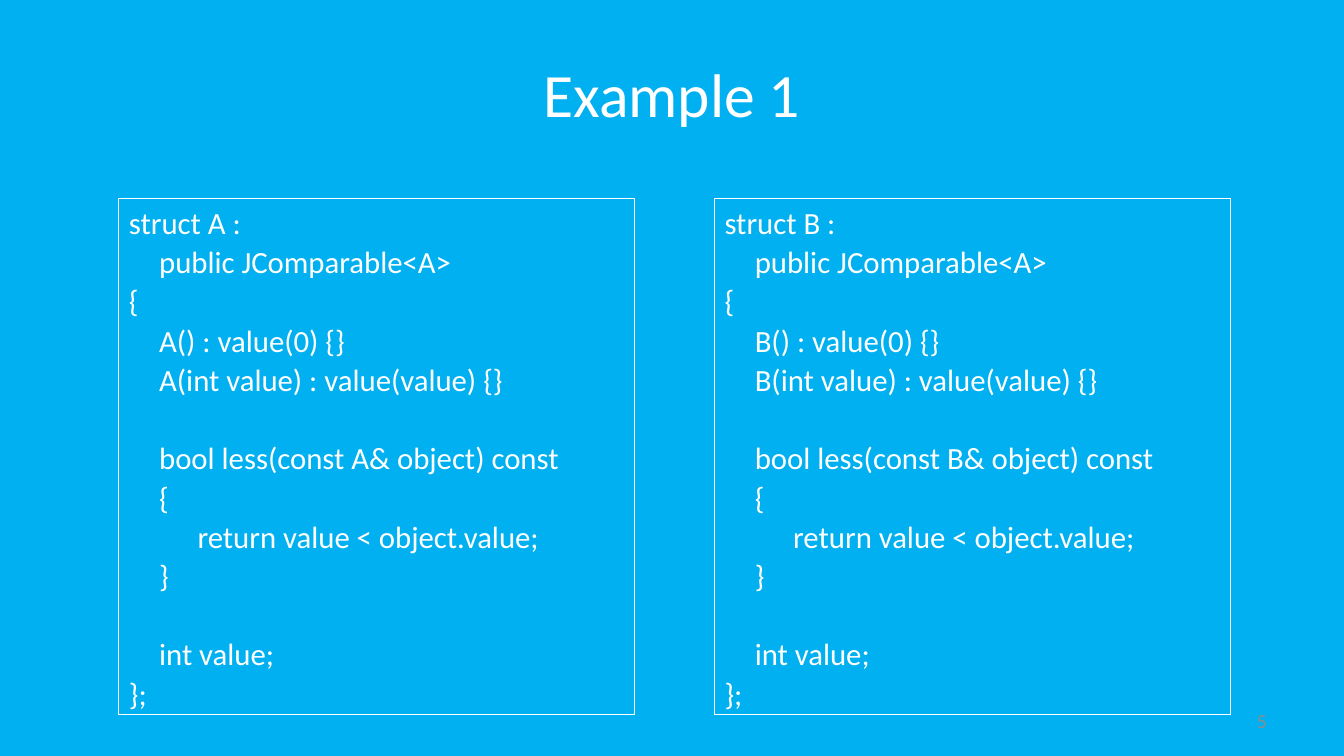
from pptx import Presentation
from pptx.dml.color import RGBColor
from pptx.enum.shapes import MSO_SHAPE
from pptx.enum.text import MSO_ANCHOR, PP_ALIGN
from pptx.util import Pt

# Content: each code line is (indent level, blank lines above, text)
TITLE = "Example 1"
PAGE_NUMBER = "5"
STRUCT_NAMES = ["A", "B"]
STRUCT_LINES = [
    (0, 0, "struct {name} :"),
    (1, 0, "public JComparable<A>"),
    (0, 0, "{{"),
    (1, 0, "{name}() : value(0) {{}}"),
    (1, 0, "{name}(int value) : value(value) {{}}"),
    (1, 1, "bool less(const {name}& object) const"),
    (1, 0, "{{"),
    (2, 0, "return value < object.value;"),
    (1, 0, "}}"),
    (1, 1, "int value;"),
    (0, 0, "}};"),
]

THEME = {
    "font": "Calibri",
    "background": RGBColor(0x00, 0xB0, 0xF0),
    "ink": RGBColor(0xFF, 0xFF, 0xFF),
    "muted": RGBColor(0x8C, 0x8C, 0x8C),
    "title_size": Pt(44),
    "code_size": Pt(22),
    "page_size": Pt(14),
}

# Layout in points
SLIDE_SIZE = (960, 540)
TITLE_BOX = (48, 21.6, 864, 90)
PAGE_BOX = (688, 500.5, 224, 28.75)
PANEL_LEFT, PANEL_TOP, PANEL_SIDE, PANEL_GAP = 85, 141.75, 368.5, 57
INDENTS = (0, 21.6, 49)
LINE_PITCH = 28


def apply(target, formats):
    for name, value in formats.items():
        setattr(target, name, value)


def write(paragraph, text, size, color, **formats):
    run = paragraph.add_run()
    run.text = text
    apply(run.font, {"name": THEME["font"], "size": THEME[size]})
    run.font.color.rgb = THEME[color]
    apply(paragraph, formats)


def add_label(slide, box, text, size, color, alignment):
    frame = slide.shapes.add_textbox(*map(Pt, box)).text_frame
    apply(frame, {"word_wrap": True, "vertical_anchor": MSO_ANCHOR.MIDDLE})
    write(frame.paragraphs[0], text, size, color, alignment=alignment)


def add_struct(slide, left, name):
    panel = slide.shapes.add_shape(
        MSO_SHAPE.RECTANGLE, Pt(left), Pt(PANEL_TOP), Pt(PANEL_SIDE), Pt(PANEL_SIDE))
    panel.shadow.inherit = False
    panel.fill.background()
    panel.line.color.rgb = THEME["ink"]
    panel.line.width = Pt(0.75)
    code = panel.text_frame
    apply(code, {"word_wrap": True, "vertical_anchor": MSO_ANCHOR.MIDDLE})
    for index, (level, blanks, text) in enumerate(STRUCT_LINES):
        line = code.add_paragraph() if index else code.paragraphs[0]
        write(line, text.format(name=name), "code_size", "ink",
              alignment=PP_ALIGN.LEFT, line_spacing=Pt(LINE_PITCH),
              space_before=Pt(blanks * LINE_PITCH))
        line._p.get_or_add_pPr().set("marL", str(Pt(INDENTS[level])))


def main():
    deck = Presentation()
    deck.slide_width, deck.slide_height = map(Pt, SLIDE_SIZE)
    slide = deck.slides.add_slide(deck.slide_layouts[6])
    slide.background.fill.solid()
    slide.background.fill.fore_color.rgb = THEME["background"]

    # Title and page number
    add_label(slide, TITLE_BOX, TITLE, "title_size", "ink", PP_ALIGN.CENTER)
    add_label(slide, PAGE_BOX, PAGE_NUMBER, "page_size", "muted", PP_ALIGN.RIGHT)

    # Code panels, side by side
    for column, name in enumerate(STRUCT_NAMES):
        add_struct(slide, PANEL_LEFT + column * (PANEL_SIDE + PANEL_GAP), name)

    deck.save("out.pptx")


if __name__ == "__main__":
    main()
